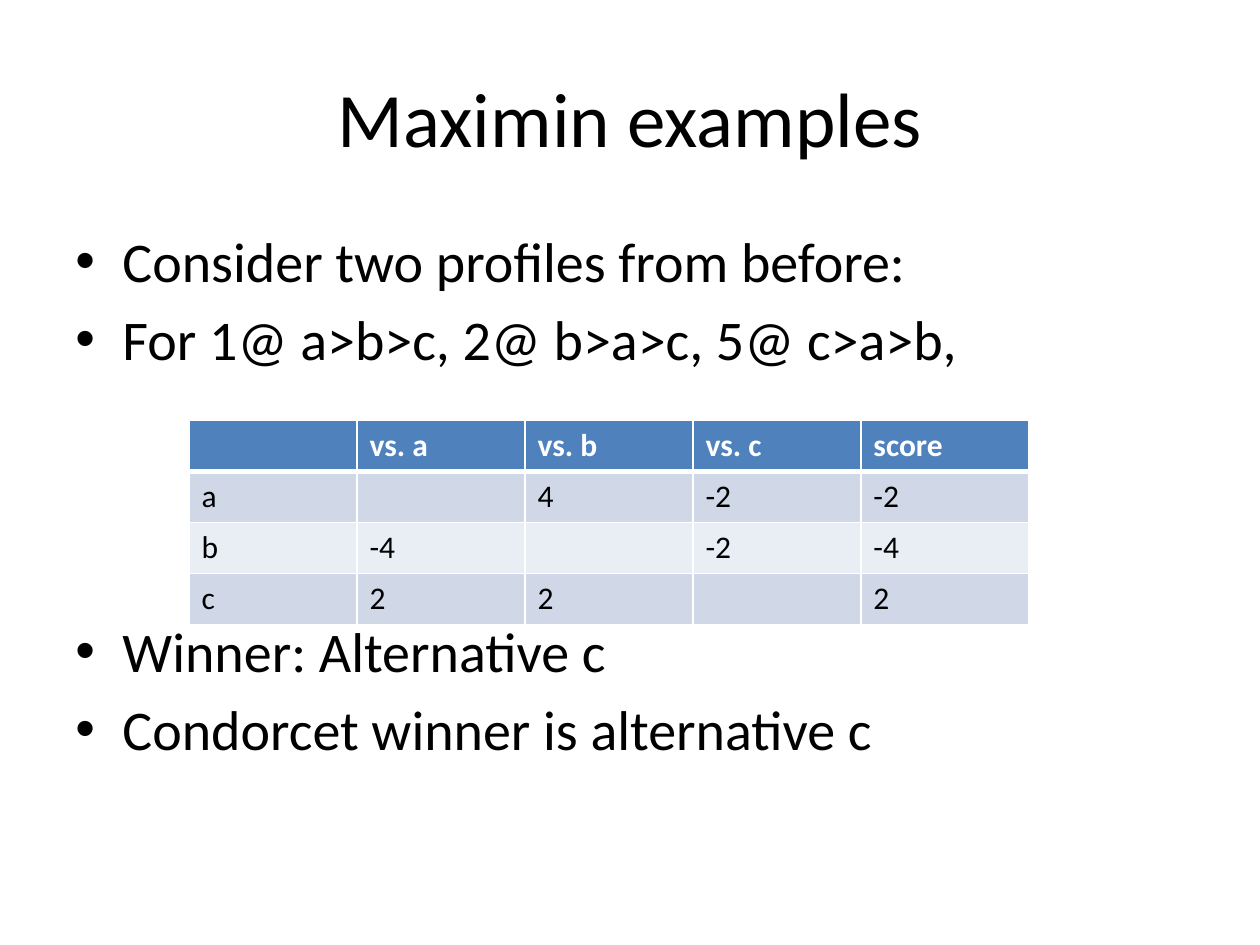
from dataclasses import dataclass

from lxml import etree
from pptx import Presentation
from pptx.dml.color import RGBColor
from pptx.enum import text as t
from pptx.oxml import ns
from pptx.util import Cm, Pt

FONT = "Calibri"
BLACK, WHITE, HEADER = "000000", "FFFFFF", "4F81BD"
BANDS = ("D0D8E8", "E9EDF4")


@dataclass
class Box:
    left: float
    top: float
    width: float
    height: float

    def lengths(self) -> tuple:
        return Cm(self.left), Cm(self.top), Cm(self.width), Cm(self.height)


@dataclass
class Bullet:
    wording: str
    space_before: float = 6


TITLE_BOX = Box(1.27, 0.76, 22.86, 3.18)
BODY_BOX = Box(1.27, 4.45, 22.86, 12.57)
SCORE_BOX = Box(3.81, 8.47, 16.93, 4.12)
INDENT = Cm(0.95)

BULLETS = [
    Bullet("Consider two profiles from before:"),
    Bullet("For 1@ a>b>c, 2@ b>a>c, 5@ c>a>b,"),
    Bullet("Winner: Alternative c", 140),  # leaves room for the score table
    Bullet("Condorcet winner is alternative c"),
]
SCORES = [
    ["", "vs. a", "vs. b", "vs. c", "score"],
    ["a", "", "4", "-2", "-2"],
    ["b", "-4", "", "-2", "-4"],
    ["c", "2", "2", "", "2"],
]


def color(hex_value: str) -> RGBColor:
    return RGBColor.from_string(hex_value)


def write(paragraph, wording: str, size: float, hex_value: str = BLACK, bold: bool = False) -> None:
    run = paragraph.add_run()
    run.text = wording
    for name, value in {"name": FONT, "size": Pt(size), "bold": bold}.items():
        setattr(run.font, name, value)
    run.font.color.rgb = color(hex_value)


def add_frame(slide, box: Box, anchor):
    frame = slide.shapes.add_textbox(*box.lengths()).text_frame
    for name, value in {"word_wrap": True, "vertical_anchor": anchor}.items():
        setattr(frame, name, value)
    return frame


def add_bullet(paragraph, bullet: Bullet) -> None:
    paragraph.space_before = Pt(bullet.space_before)
    properties = paragraph._p.get_or_add_pPr()
    properties.set("marL", str(INDENT))
    properties.set("indent", str(-INDENT))
    etree.SubElement(properties, ns.qn("a:buFont"), typeface="Arial")
    etree.SubElement(properties, ns.qn("a:buChar"), char="•")
    write(paragraph, bullet.wording, 32)


def add_borders(cell, widths: dict[str, float]) -> None:
    properties = cell._tc.get_or_add_tcPr()
    for position, (side, width) in enumerate(widths.items()):
        line = etree.Element(ns.qn(f"a:ln{side}"), w=str(Pt(width)))
        fill = etree.SubElement(line, ns.qn("a:solidFill"))
        etree.SubElement(fill, ns.qn("a:srgbClr"), val=WHITE)
        properties.insert(position, line)


def add_scores(slide, box: Box, rows: list[list[str]]) -> None:
    table = slide.shapes.add_table(len(rows), len(rows[0]), *box.lengths()).table
    for r, row in enumerate(rows):
        is_header = r == 0
        fill = HEADER if is_header else BANDS[(r - 1) % 2]
        borders = {"L": 1, "R": 1, "T": 3 if r == 1 else 1, "B": 3 if is_header else 1}
        for c, wording in enumerate(row):
            cell = table.cell(r, c)
            cell.fill.solid()
            cell.fill.fore_color.rgb = color(fill)
            add_borders(cell, borders)
            if wording:
                write(cell.text_frame.paragraphs[0], wording, 18,
                      WHITE if is_header else BLACK, is_header)


def main() -> None:
    deck = Presentation()
    deck.slide_width, deck.slide_height = Cm(25.4), Cm(19.05)
    slide = deck.slides.add_slide(deck.slide_layouts[6])

    # Title
    heading = add_frame(slide, TITLE_BOX, t.MSO_ANCHOR.MIDDLE).paragraphs[0]
    heading.alignment = t.PP_ALIGN.CENTER
    write(heading, "Maximin examples", 44)

    # Bullets above and below the table
    body = add_frame(slide, BODY_BOX, t.MSO_ANCHOR.TOP)
    for i, bullet in enumerate(BULLETS):
        add_bullet(body.add_paragraph() if i else body.paragraphs[0], bullet)

    # Pairwise scores
    add_scores(slide, SCORE_BOX, SCORES)

    deck.save("out.pptx")


if __name__ == "__main__":
    main()
